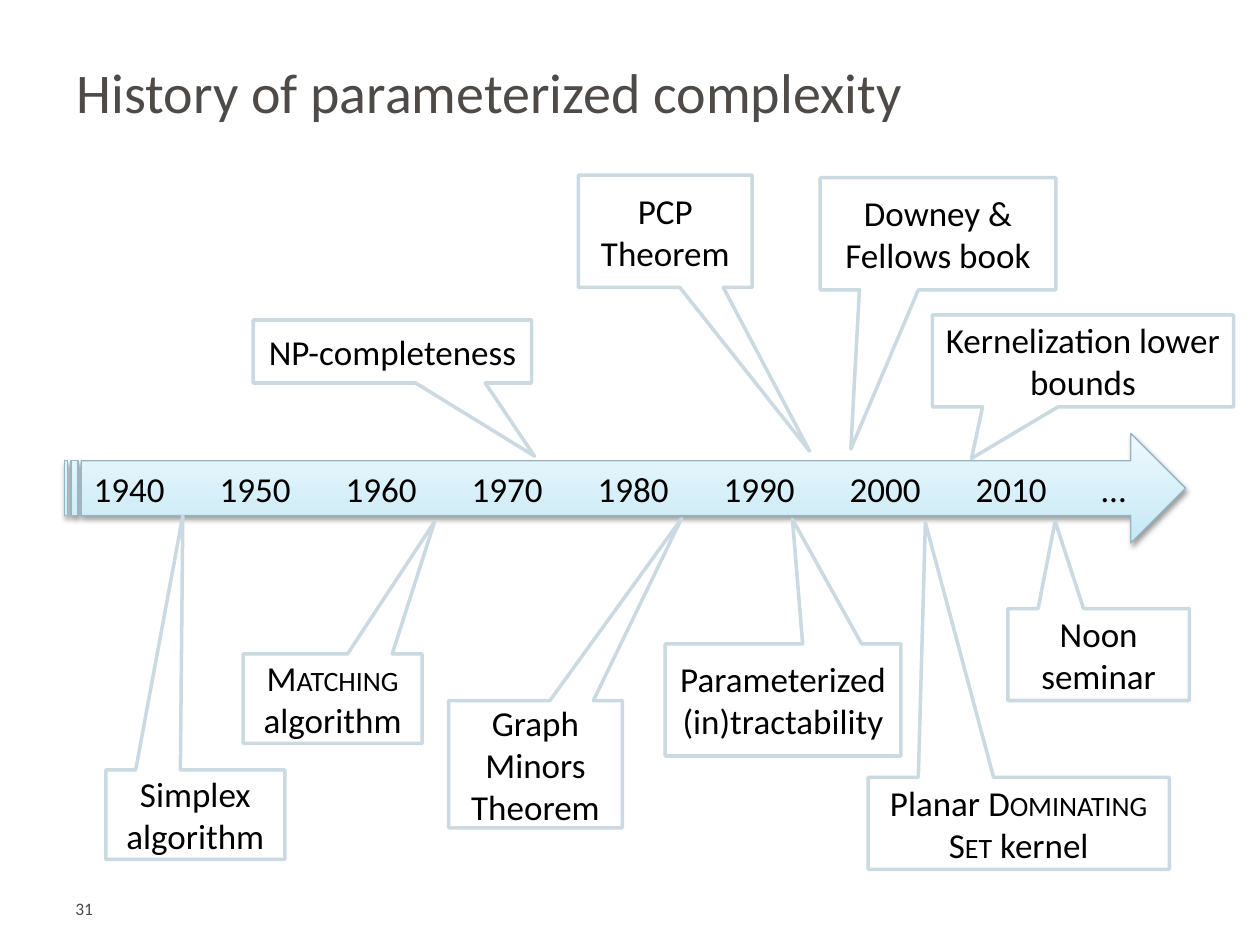
"""Build the slide on the history of parameterized complexity."""
import copy

import lxml.etree
import pptx
import pptx.dml.color
import pptx.enum.shapes
import pptx.enum.text
import pptx.oxml.ns
import pptx.util

Inches = pptx.util.Inches
Pt = pptx.util.Pt
RGBColor = pptx.dml.color.RGBColor
SHAPES = pptx.enum.shapes.MSO_SHAPE
ALIGN = pptx.enum.text.PP_ALIGN
ANCHOR = pptx.enum.text.MSO_ANCHOR
qn = pptx.oxml.ns.qn

BLACK = RGBColor(0x00, 0x00, 0x00)
WHITE = RGBColor(0xFF, 0xFF, 0xFF)
GREY = RGBColor(0x4E, 0x4A, 0x48)
CALLOUT_LINE = RGBColor(0xCA, 0xDA, 0xE0)
ARROW_LINE = RGBColor(0x95, 0xB7, 0xC4)
ARROW_STOPS = [
    (0, RGBColor(0xC3, 0xE8, 0xF6)),
    (0.35, RGBColor(0xD4, 0xEE, 0xF8)),
    (1, RGBColor(0xEE, 0xF9, 0xFD)),
]

TITLE = "History of parameterized complexity"
SLIDE_NUMBER = "31"
YEARS = [str(year) for year in range(1940, 2011, 10)] + ["…"]
SMALL_CAPS = {"Matching", "Dominating Set"}
CALLOUTS = [
    (["Simplex algorithm"], (0.84, 6.11, 1.42, 0.71), (-0.07, -3.34)),
    (["Matching", " algorithm"], (1.93, 5.19, 1.42, 0.71), (0.57, -1.98)),
    (["NP-completeness"], (2.01, 2.54, 2.21, 0.5), (0.51, 1.66)),
    (["Graph Minors Theorem"], (3.56, 5.56, 1.38, 1.01), (0.84, -1.93)),
    (["PCP Theorem"], (4.59, 1.39, 1.38, 0.89), (0.83, 1.96)),
    (["Parameterized\v(in)tractability"], (5.28, 5.11, 1.87, 0.89), (0.04, -1.61)),
    (["Downey & Fellows book"], (6.51, 1.41, 1.87, 0.89), (-0.37, 1.92)),
    (["Planar ", "Dominating Set", " kernel"], (6.89, 6.17, 2.39, 0.73), (-0.31, -3.27)),
    (["Kernelization lower bounds"], (7.4, 2.5, 2.39, 0.73), (-0.37, 1.06)),
    (["Noon seminar"], (8, 4.83, 1.44, 0.73), (-0.24, -1.45)),
]

LABEL_FONT = {"name": "Calibri", "size": Pt(20)}
TITLE_FONT = {"name": "Calibri", "size": Pt(32)}
NUMBER_FONT = {"name": "Calibri", "size": Pt(10)}
MIDDLE_FRAME = {"word_wrap": True, "vertical_anchor": ANCHOR.MIDDLE}
NUMBER_FRAME = {"word_wrap": True, "vertical_anchor": ANCHOR.TOP, "margin_top": 0}


def set_attributes(target, values):
    for name, value in values.items():
        setattr(target, name, value)


def write_text(shape, parts, font, color, alignment=ALIGN.LEFT, frame=MIDDLE_FRAME):
    set_attributes(shape.text_frame, frame)
    paragraph = shape.text_frame.paragraphs[0]
    paragraph.alignment = alignment
    for part in parts:
        for index, line in enumerate(part.split("\v")):
            if index:
                paragraph.add_line_break()
            run = paragraph.add_run()
            run.text = line
            set_attributes(run.font, font)
            run.font.color.rgb = color
            if part in SMALL_CAPS:
                run.font._element.set("cap", "small")
    return paragraph


def add_text_box(slide, box, *text, **options):
    shape = slide.shapes.add_textbox(*map(Inches, box))
    write_text(shape, *text, **options)


def add_outlined_shape(slide, kind, box, line_color, line_width):
    shape = slide.shapes.add_shape(kind, *map(Inches, box))
    shape.shadow.inherit = False
    shape.line.color.rgb = line_color
    shape.line.width = Pt(line_width)
    return shape


def add_timeline(slide):
    arrow = add_outlined_shape(
        slide, SHAPES.STRIPED_RIGHT_ARROW, (0.51, 3.44, 8.9, 0.87), ARROW_LINE, 0.75)
    arrow.fill.gradient()
    arrow.fill.gradient_angle = 90
    properties = arrow._element.spPr
    first_stop = properties.find(".//" + qn("a:gs"))
    first_stop.addnext(copy.deepcopy(first_stop))
    for stop, (position, color) in zip(arrow.fill.gradient_stops, ARROW_STOPS):
        stop.position = position
        stop.color.rgb = color
    shadow = lxml.etree.SubElement(
        properties.find(qn("a:effectLst")), qn("a:outerShdw"),
        blurRad=str(Pt(3.1)), dist=str(Pt(1.6)), dir="5400000", rotWithShape="0")
    shadow_color = lxml.etree.SubElement(shadow, qn("a:srgbClr"), val=str(BLACK))
    lxml.etree.SubElement(shadow_color, qn("a:alpha"), val="38000")
    paragraph = write_text(arrow, ["\t".join(YEARS)], LABEL_FONT, BLACK)
    tabs = lxml.etree.SubElement(paragraph._p.get_or_add_pPr(), qn("a:tabLst"))
    for position in range(1, len(YEARS)):
        lxml.etree.SubElement(tabs, qn("a:tab"), pos=str(Inches(position)), algn="l")


def add_callout(slide, parts, box, tip):
    callout = add_outlined_shape(slide, SHAPES.RECTANGULAR_CALLOUT, box, CALLOUT_LINE, 2)
    callout.fill.solid()
    callout.fill.fore_color.rgb = WHITE
    for index, offset in enumerate(tip):
        callout.adjustments[index] = offset
    write_text(callout, parts, LABEL_FONT, BLACK, ALIGN.CENTER)


def main():
    presentation = pptx.Presentation()
    set_attributes(presentation, {"slide_width": Inches(10), "slide_height": Inches(7.5)})
    slide = presentation.slides.add_slide(presentation.slide_layouts[6])
    add_text_box(slide, (0.51, 0.38, 9, 0.69), [TITLE], TITLE_FONT, GREY)
    add_timeline(slide)
    for parts, box, tip in CALLOUTS:
        add_callout(slide, parts, box, tip)
    add_text_box(slide, (0.5, 7.13, 2.14, 0.3), [SLIDE_NUMBER], NUMBER_FONT, GREY,
                 frame=NUMBER_FRAME)
    presentation.save("out.pptx")


if __name__ == "__main__":
    main()
